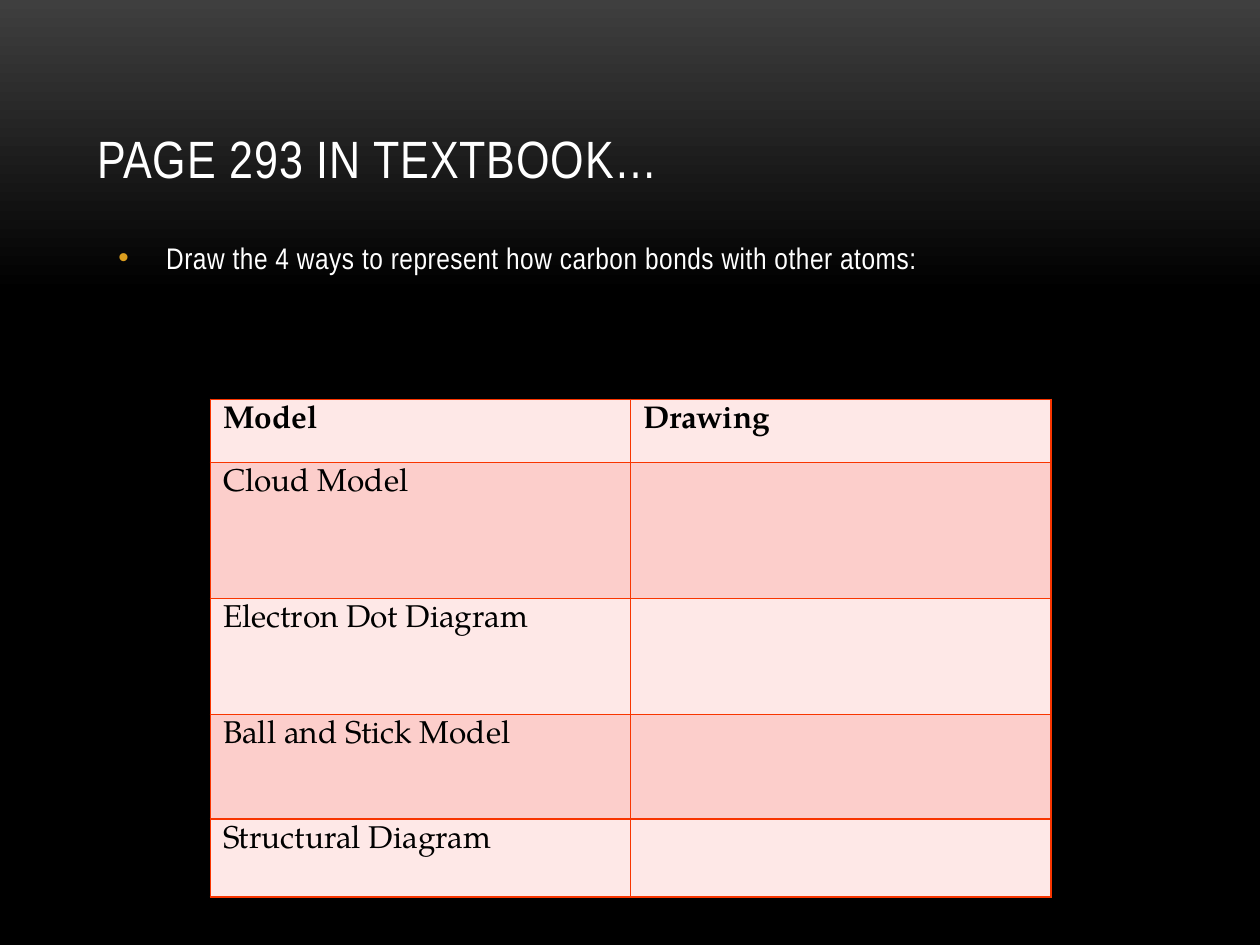
from lxml.etree import SubElement
from pptx import Presentation
from pptx.dml.color import RGBColor
from pptx.enum.text import MSO_ANCHOR, MSO_AUTO_SIZE, PP_ALIGN
from pptx.oxml.ns import qn
from pptx.util import Inches, Pt

WHITE = RGBColor(0xFF, 0xFF, 0xFF)
BLACK = RGBColor(0, 0, 0)
CHARCOAL = RGBColor(0x3F, 0x3F, 0x3F)
GOLD = RGBColor(0xDC, 0x9E, 0x1F)
ORANGE = RGBColor(0xF8, 0x35, 0x00)
PALE_PINK = RGBColor(0xFE, 0xE8, 0xE7)
PINK = RGBColor(0xFC, 0xCE, 0xCB)

SANS = "Arial Narrow"
SERIF = "TeX Gyre Pagella"

ROWS = [
    ("Model", "Drawing", 0.5),
    ("Cloud Model", "", 1.08),
    ("Electron Dot Diagram", "", 0.92),
    ("Ball and Stick Model", "", 0.83),
    ("Structural Diagram", "", 0.62),
]


def style(paragraph, face, size, color, bold=False, spacing=0):
    for run in paragraph.runs:
        run.font.name = face
        run.font.size = Pt(size)
        run.font.color.rgb = color
        run.font.bold = bold
        if spacing:
            run.font._element.set("spc", str(int(spacing * 100)))


def add_color(parent, color):
    SubElement(parent, qn("a:srgbClr"), val=str(color))


def paint_background(slide):
    fill = slide.background.fill
    fill.gradient()
    fill.gradient_angle = 270
    for stop, color, position in zip(fill.gradient_stops, (CHARCOAL, BLACK), (0, 0.31)):
        stop.color.rgb = color
        stop.position = position


def place_title(slide, box):
    title = slide.shapes.title
    title.left, title.top, title.width, title.height = box
    frame = title.text_frame
    frame.text = "PAGE 293 IN TEXTBOOK…"
    frame.word_wrap = True
    frame.auto_size = MSO_AUTO_SIZE.NONE
    frame.vertical_anchor = MSO_ANCHOR.BOTTOM
    heading = frame.paragraphs[0]
    heading.alignment = PP_ALIGN.LEFT
    style(heading, SANS, 30, WHITE, spacing=0.5)


def place_task(slide, box):
    frame = slide.shapes.add_textbox(*box).text_frame
    frame.word_wrap = True
    task = frame.paragraphs[0]
    task.text = "Draw the 4 ways to represent how carbon bonds with other atoms:"
    task.space_after = Pt(6)
    properties = task._p.get_or_add_pPr()
    indent = Inches(0.38)
    properties.set("marL", str(indent))
    properties.set("indent", str(-indent))
    add_color(SubElement(properties, qn("a:buClr")), GOLD)
    SubElement(properties, qn("a:buFont"), typeface="Arial")
    SubElement(properties, qn("a:buChar"), char="•")
    style(task, SANS, 17, WHITE, spacing=0.3)


def add_borders(cell):
    properties = cell._tc.get_or_add_tcPr()
    for index, side in enumerate(("lnL", "lnR", "lnT", "lnB")):
        line = SubElement(properties, qn(f"a:{side}"), w=str(Pt(1)))
        add_color(SubElement(line, qn("a:solidFill")), ORANGE)
        properties.insert(index, line)


def place_models(slide, box):
    table = slide.shapes.add_table(len(ROWS), 2, *box).table
    for column in table.columns:
        column.width = box[2] // 2
    total = sum(share for *_, share in ROWS)
    for index, (*texts, share) in enumerate(ROWS):
        table.rows[index].height = int(box[3] * share / total)
        for cell, text in zip(table.rows[index].cells, texts):
            cell.text = text
            cell.fill.solid()
            cell.fill.fore_color.rgb = PINK if index % 2 else PALE_PINK
            style(cell.text_frame.paragraphs[0], SERIF, 18, BLACK, bold=index == 0)
            add_borders(cell)


def main():
    deck = Presentation()
    deck.slide_width, deck.slide_height = Inches(10), Inches(7.5)
    slide = deck.slides.add_slide(deck.slide_layouts[5])

    def region(*lengths):
        return [Inches(length) for length in lengths]

    paint_background(slide)
    place_title(slide, region(0.67, 0.3, 8.67, 1.25))
    place_task(slide, region(0.84, 1.85, 8.32, 5.49))
    place_models(slide, region(1.67, 3.17, 6.67, 3.95))
    deck.save("out.pptx")


if __name__ == "__main__":
    main()
